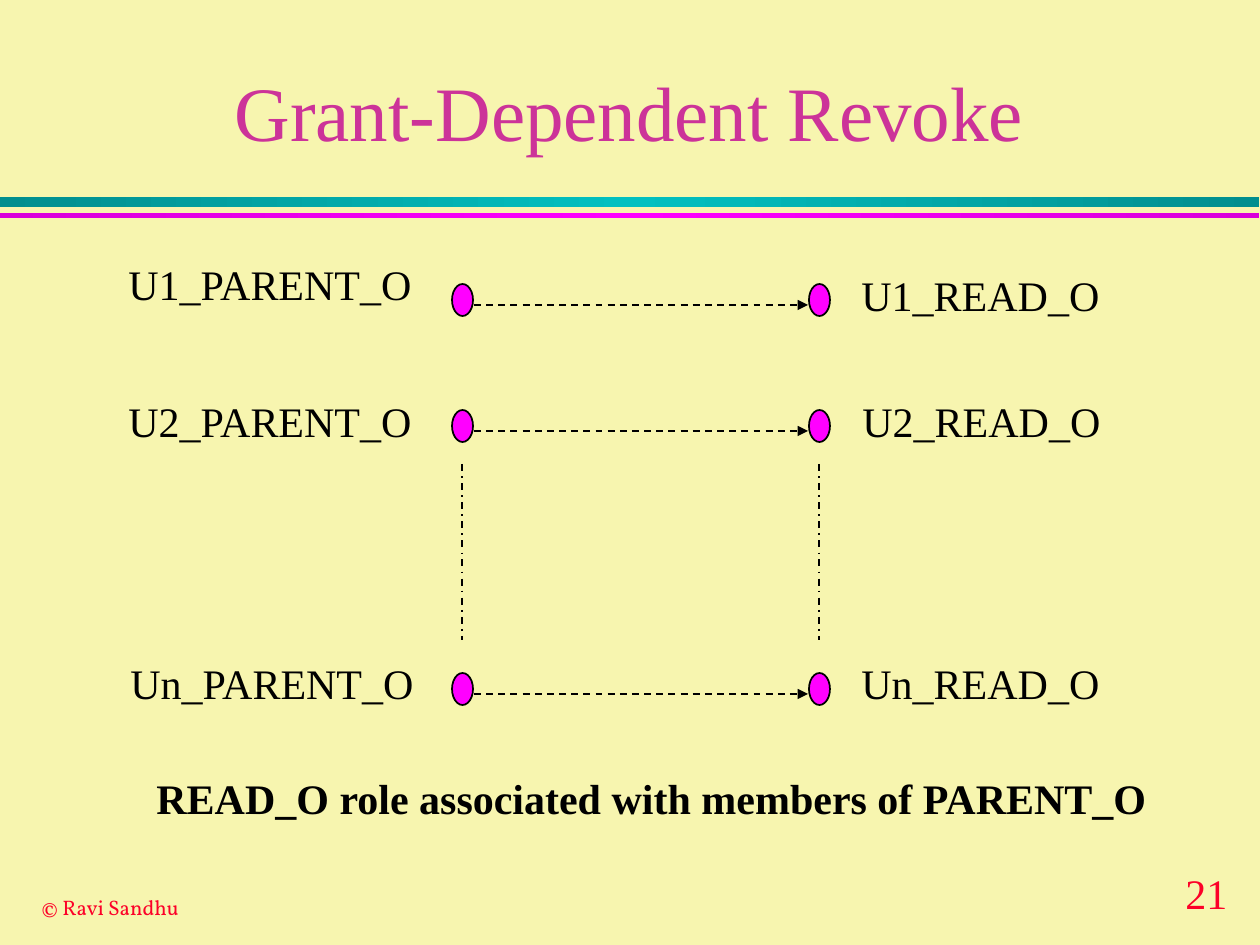
from copy import deepcopy

from lxml import etree
from pptx import Presentation
from pptx.dml.color import RGBColor
from pptx.enum.dml import MSO_LINE
from pptx.enum.shapes import MSO_CONNECTOR, MSO_SHAPE
from pptx.enum.text import MSO_ANCHOR, MSO_AUTO_SIZE, PP_ALIGN
from pptx.oxml.ns import qn
from pptx.util import Pt

RECTANGLE, OVAL = MSO_SHAPE.RECTANGLE, MSO_SHAPE.OVAL
STRAIGHT = MSO_CONNECTOR.STRAIGHT
DASH, DASH_DOT = MSO_LINE.DASH, MSO_LINE.DASH_DOT
MIDDLE, CENTER = MSO_ANCHOR.MIDDLE, PP_ALIGN.CENTER
FIT_SHAPE = MSO_AUTO_SIZE.SHAPE_TO_FIT_TEXT
TITLE_ONLY = 5
EMU_PER_PX = 914400 / 126


def px(length):
    return round(length * EMU_PER_PX)


def color(hex_string):
    return RGBColor.from_string(hex_string)


class SlideBuilder:
    font = "Times New Roman"
    ink = "000000"
    accent = "FF00FF"
    red = "FC0128"

    def __init__(self, slide, background):
        self.slide = slide
        slide.background.fill.solid()
        slide.background.fill.fore_color.rgb = color(background)

    def add_text(self, frame, text, size, hex_color, font=None, bold=False):
        run = frame.paragraphs[0].add_run()
        run.text = text
        run.font.name = font or self.font
        run.font.size = Pt(size)
        run.font.bold = bold
        run.font.color.rgb = color(hex_color)

    def title(self, text, x, y, w, h):
        title = self.slide.shapes.title
        title.left, title.top, title.width, title.height = map(px, (x, y, w, h))
        frame = title.text_frame
        frame.vertical_anchor = MIDDLE
        frame.paragraphs[0].alignment = CENTER
        self.add_text(frame, text, 44, "CC3399")

    def label(self, text, x, y, w, h=63, size=24, hex_color=ink, **style):
        box = self.slide.shapes.add_textbox(*map(px, (x, y, w, h)))
        box.text_frame.word_wrap = False
        box.text_frame.auto_size = FIT_SHAPE
        self.add_text(box.text_frame, text, size, hex_color, **style)

    def shape(self, kind, x, y, w, h):
        shape = self.slide.shapes.add_shape(kind, *map(px, (x, y, w, h)))
        shape.shadow.inherit = False
        return shape

    def band(self, y, h, edge, middle):
        band = self.shape(RECTANGLE, 0, y, 1259, h)
        band.line.fill.background()
        band.fill.gradient()
        band.fill.gradient_angle = 0
        stop_list = band._element.spPr.find(".//" + qn("a:gsLst"))
        stop_list.append(deepcopy(stop_list[0]))
        for stop, position, tone in zip(band.fill.gradient_stops, (0, 0.5, 1), (edge, middle, edge)):
            stop.position = position
            stop.color.rgb = color(tone)

    def node(self, x, y, w, h):
        node = self.shape(OVAL, x, y, w, h)
        node.fill.solid()
        node.fill.fore_color.rgb = color(self.accent)
        node.line.color.rgb = color(self.ink)
        node.line.width = Pt(1)

    def line(self, x1, y1, x2, y2, dash, arrow=False):
        line = self.slide.shapes.add_connector(STRAIGHT, *map(px, (x1, y1, x2, y2)))
        line.line.color.rgb = color(self.ink)
        line.line.width = Pt(1)
        line.line.dash_style = dash
        properties = line._element.spPr
        if arrow:
            etree.SubElement(properties.find(qn("a:ln")), qn("a:tailEnd"), type="triangle")
        etree.SubElement(properties, qn("a:effectLst"))


def main():
    presentation = Presentation()
    presentation.slide_width, presentation.slide_height = px(1260), px(945)
    slide = presentation.slides.add_slide(presentation.slide_layouts[TITLE_ONLY])
    builder = SlideBuilder(slide, "F7F5AF")

    # Title and the double rule below it
    builder.title("Grant-Dependent Revoke", 94, 32, 1071, 158)
    builder.band(197, 10, "008E8E", "00C0C0")
    builder.band(213, 5, "DA00DA", "FF00FF")

    # Footer
    builder.label("21", 1173, 861, 74, hex_color=builder.red)
    builder.label("© Ravi Sandhu", 29, 888, 165, 38, size=12,
                  hex_color=builder.red, font="Vollkorn")

    # One row per user: parent role, arrow, read role
    parent_x, read_x = 452, 809
    node_w, node_h = 21, 32
    rows = [  # user, node top, parent label x and y, read label x and y
        ("U1", 284, (116, 252), (849, 263)),
        ("U2", 410, (116, 389), (850, 389)),
        ("Un", 673, (118, 651), (849, 651)),
    ]
    for user, node_y, parent_at, read_at in rows:
        builder.label(f"{user}_PARENT_O", *parent_at, 312)
        builder.label(f"{user}_READ_O", *read_at, 263)
        for node_x in (parent_x, read_x):
            builder.node(node_x, node_y, node_w, node_h)
        arrow_y = node_y + 21
        builder.line(parent_x + node_w + 1, arrow_y, read_x - 1, arrow_y, DASH, arrow=True)

    # Continuation between the second and last user
    for node_x in (parent_x, read_x):
        center_x = node_x + node_w // 2
        builder.line(center_x, 464, center_x, 640, DASH_DOT)

    # Conclusion
    builder.label("READ_O role associated with members of PARENT_O", 144, 766, 1019, bold=True)

    presentation.save("out.pptx")


if __name__ == "__main__":
    main()
